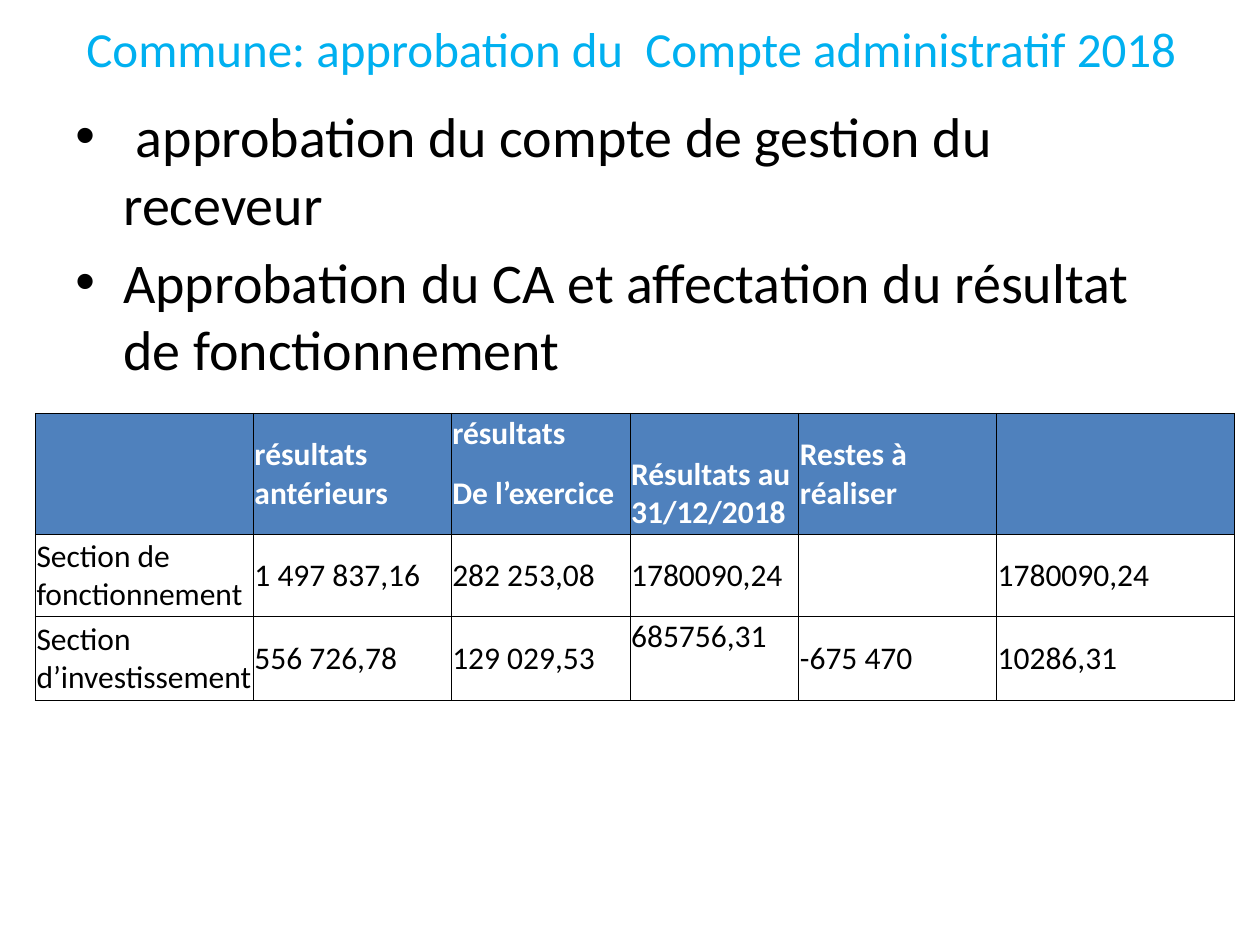
import pptx
import pptx.util
import pptx.dml.color
import pptx.enum.text
import pptx.oxml
from lxml import etree

Inches = pptx.util.Inches
Pt = pptx.util.Pt
RGBColor = pptx.dml.color.RGBColor
Anchor = pptx.enum.text.MSO_ANCHOR

SKY = RGBColor(0x00, 0xB0, 0xF0)
BLACK = RGBColor(0x00, 0x00, 0x00)
WHITE = RGBColor(0xFF, 0xFF, 0xFF)
BLUE = RGBColor(0x4F, 0x81, 0xBD)

FONT = "Calibri"
BULLETS = [
    " approbation du compte de gestion du receveur",
    "Approbation du CA et affectation du résultat de fonctionnement",
]
COLUMN_WIDTHS = [1.73, 1.57, 1.42, 1.34, 1.57, 1.89]
ROW_HEIGHTS = [0.3, 0.65, 0.65, 0.67]
HEADER_ROWS = 2
MERGED_COLUMNS = [0, 1, 4, 5]
RESULTS = [
    ["", "résultats antérieurs", "résultats", "", "Restes à réaliser", ""],
    ["", "", "De l’exercice", "Résultats au 31/12/2018", "", ""],
    ["Section de fonctionnement", "1 497 837,16", "282 253,08",
     "1780090,24", "", "1780090,24"],
    ["Section d’investissement", "556 726,78", "129 029,53",
     "685756,31", "-675 470", "10286,31"],
]
TOP_ALIGNED_CELL = (3, 3)


def set_font(paragraph, size, color, bold=False):
    """Give a paragraph its typeface, size, colour and weight."""
    font = paragraph.font
    font.name = FONT
    font.size = Pt(size)
    font.color.rgb = color
    font.bold = bold


def add_text_frame(slide, left, top, width, height):
    """Add a wrapping text box and return its text frame."""
    frame = slide.shapes.add_textbox(
        Inches(left), Inches(top), Inches(width), Inches(height)).text_frame
    frame.word_wrap = True
    return frame


def add_title(slide, left, top, width, height):
    """Place the centred slide title."""
    frame = add_text_frame(slide, left, top, width, height)
    frame.vertical_anchor = Anchor.MIDDLE
    title = frame.paragraphs[0]
    title.text = "Commune: approbation du  Compte administratif 2018"
    title.alignment = pptx.enum.text.PP_ALIGN.CENTER
    set_font(title, 28, SKY)


def add_bullets(slide, left, top, width, height):
    """Place the bulleted list of approvals."""
    frame = add_text_frame(slide, left, top, width, height)
    for index, wording in enumerate(BULLETS):
        item = frame.add_paragraph() if index else frame.paragraphs[0]
        item.text = wording
        item.space_before = Pt(6.4)
        set_font(item, 32, BLACK)
        properties = item._p.get_or_add_pPr()
        properties.set("marL", str(Inches(0.38)))
        properties.set("indent", str(-Inches(0.38)))
        bullet_font = pptx.oxml.parse_xml(
            '<a:buFont xmlns:a="http://schemas.openxmlformats.org/drawingml/2006/main"'
            ' typeface="Arial"/>')
        bullet = etree.Element(pptx.oxml.ns.qn("a:buChar"), char="•")
        position = list(properties).index(properties.find(pptx.oxml.ns.qn("a:spcBef"))) + 1
        properties.insert(position, bullet_font)
        properties.insert(position + 1, bullet)


def set_borders(cell, hidden_side):
    """Draw thin black cell borders, except on the hidden side."""
    qn = pptx.oxml.ns.qn
    for position, side in enumerate(["lnL", "lnR", "lnT", "lnB"]):
        line = etree.Element(qn("a:" + side), w=str(Pt(0.5)))
        if side == hidden_side:
            etree.SubElement(line, qn("a:noFill"))
        else:
            fill = etree.SubElement(line, qn("a:solidFill"))
            etree.SubElement(fill, qn("a:srgbClr"), val=str(BLACK))
        cell._tc.get_or_add_tcPr().insert(position, line)


def add_results_table(slide, left, top):
    """Place the table of results by budget section."""
    table = slide.shapes.add_table(
        len(ROW_HEIGHTS), len(COLUMN_WIDTHS), Inches(left), Inches(top),
        Inches(sum(COLUMN_WIDTHS)), Inches(sum(ROW_HEIGHTS))).table
    for column, width in zip(table.columns, COLUMN_WIDTHS):
        column.width = Inches(width)
    for row, height in zip(table.rows, ROW_HEIGHTS):
        row.height = Inches(height)
    hidden_sides = {0: "lnB", 1: "lnT"}
    for r, values in enumerate(RESULTS):
        is_header = r < HEADER_ROWS
        for c, value in enumerate(values):
            cell = table.cell(r, c)
            cell.text = value
            cell.margin_left = cell.margin_right = cell.margin_top = Inches(0.01)
            cell.margin_bottom = 0
            cell.vertical_anchor = Anchor.TOP if (r, c) == TOP_ALIGNED_CELL else Anchor.MIDDLE
            set_font(cell.text_frame.paragraphs[0], 18,
                     WHITE if is_header else BLACK, is_header)
            cell.fill.solid()
            cell.fill.fore_color.rgb = BLUE if is_header else WHITE
            merged = c in MERGED_COLUMNS
            set_borders(cell, None if merged else hidden_sides.get(r))
    for c in MERGED_COLUMNS:
        table.cell(0, c).merge(table.cell(HEADER_ROWS - 1, c))


def main():
    """Build the slide and save it."""
    presentation = pptx.Presentation()
    presentation.slide_width = Inches(10)
    presentation.slide_height = Inches(7.5)
    slide = presentation.slides.add_slide(presentation.slide_layouts[6])
    add_title(slide, 0.51, 0, 9, 0.76)
    add_bullets(slide, 0.5, 0.76, 9, 5.94)
    add_results_table(slide, 0.28, 3.28)
    presentation.save("out.pptx")


if __name__ == "__main__":
    main()
